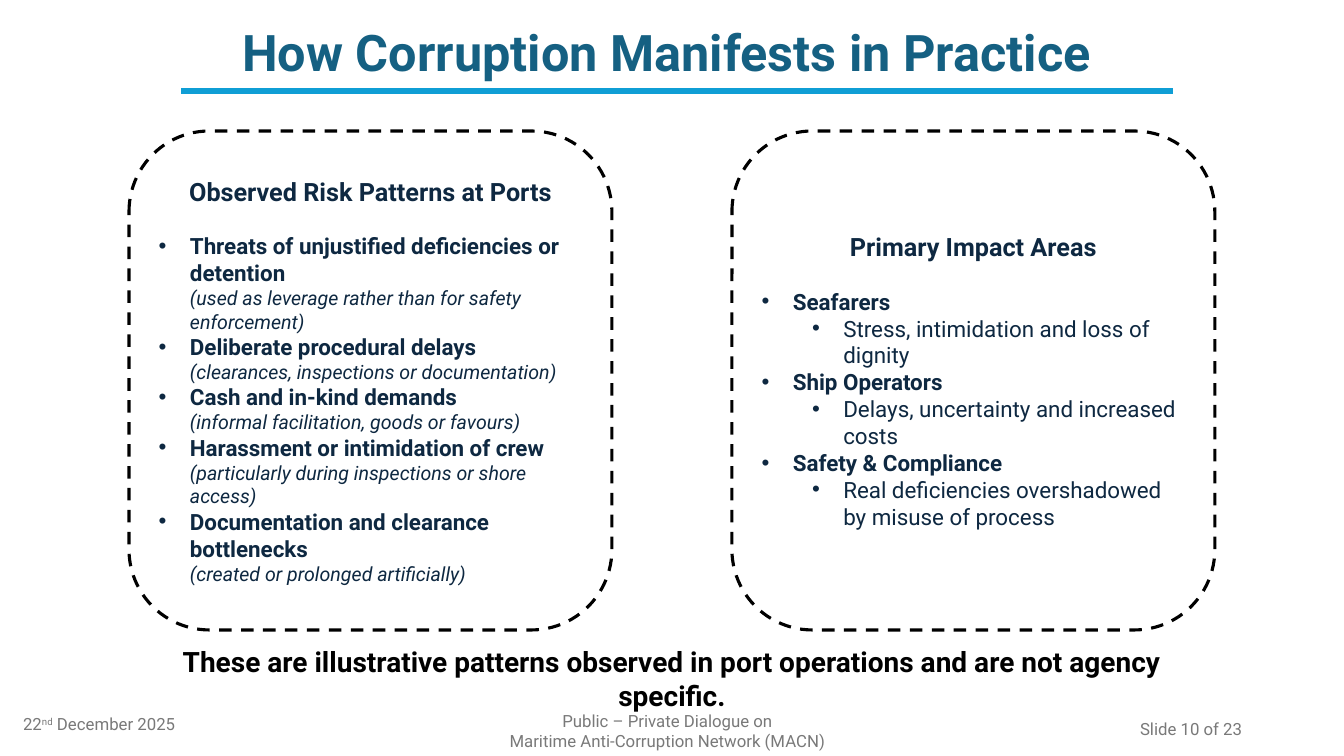
from copy import deepcopy
from dataclasses import dataclass

from lxml import etree
from pptx import Presentation
from pptx.dml.color import RGBColor
from pptx.enum.dml import MSO_LINE
from pptx.enum.shapes import MSO_CONNECTOR, MSO_SHAPE
from pptx.enum.text import MSO_ANCHOR, MSO_AUTO_SIZE, PP_ALIGN
from pptx.oxml.ns import qn
from pptx.util import Inches, Pt

LEFT, CENTER, RIGHT = PP_ALIGN.LEFT, PP_ALIGN.CENTER, PP_ALIGN.RIGHT
TOP, MIDDLE = MSO_ANCHOR.TOP, MSO_ANCHOR.MIDDLE
NO_FIT = MSO_AUTO_SIZE.NONE
ROUND_RECT, STRAIGHT, DASH = MSO_SHAPE.ROUNDED_RECTANGLE, MSO_CONNECTOR.STRAIGHT, MSO_LINE.DASH
TWO_CONTENT = 3


@dataclass(frozen=True)
class Theme:
    font: str = "Roboto"
    title: str = "156082"
    rule: str = "0F9ED5"
    ink: str = "0E2841"
    black: str = "000000"
    grey: str = "797979"
    title_size: int = 36
    note_size: int = 20
    head_size: int = 18
    body_size: int = 16
    detail_size: int = 14
    footer_size: int = 12


class Deck:
    """Holds the theme and the current slide; lengths are percent of the slide."""

    def __init__(self, theme):
        self.theme = theme
        self.prs = Presentation()
        self.prs.slide_width, self.prs.slide_height = Inches(13.33), Inches(7.5)
        self.slide = self.prs.slides.add_slide(self.prs.slide_layouts[TWO_CONTENT])

    def box(self, x, y, w, h):
        sw, sh = self.prs.slide_width, self.prs.slide_height
        return [int(n * side / 100) for n, side in ((x, sw), (y, sh), (w, sw), (h, sh))]

    def frame(self, sp, anchor, inset=None):
        tf = sp.text_frame
        fmt = {"word_wrap": True, "auto_size": NO_FIT, "vertical_anchor": anchor}
        if inset is not None:
            fmt |= {f"margin_{s}": Inches(inset) for s in ("left", "right", "top", "bottom")}
        for name, value in fmt.items():
            setattr(tf, name, value)
        return tf

    def place(self, idx, area):
        sp = self.slide.placeholders[idx]
        sp.left, sp.top, sp.width, sp.height = self.box(*area)
        return sp

    def run(self, p, text, size, color, bold=False, italic=False):
        r = p.add_run()
        r.text = text
        fmt = {"name": self.theme.font, "size": Pt(size), "bold": bold, "italic": italic}
        for name, value in fmt.items():
            setattr(r.font, name, value)
        r.font.color.rgb = RGBColor.from_string(color)
        return r

    def paragraph(self, tf, first=False, align=LEFT, after=0, spacing=1.0):
        p = tf.paragraphs[0] if first else tf.add_paragraph()
        fmt = {"alignment": align, "space_before": Pt(0), "space_after": Pt(after),
               "line_spacing": spacing}
        for name, value in fmt.items():
            setattr(p, name, value)
        return p

    def bullet(self, p, char=None, level=0):
        p.level = level
        pPr = p._p.get_or_add_pPr()
        hang = Inches(0.31) if char else 0
        pPr.set("marL", str(hang + Inches(0.5) * level))
        pPr.set("indent", str(-hang))
        if char:
            etree.SubElement(pPr, qn("a:buFont")).set("typeface", "Arial")
            etree.SubElement(pPr, qn("a:buChar")).set("char", char)
        else:
            etree.SubElement(pPr, qn("a:buNone"))

    def title(self, text, area):
        t = self.theme
        tf = self.frame(self.place(0, area), MIDDLE)
        p = self.paragraph(tf, True, CENTER, spacing=0.9)
        self.run(p, text, t.title_size, t.title, bold=True)

    def rule(self, x1, x2, y):
        ends = self.box(x1, y, x2, y)
        line = self.slide.shapes.add_connector(STRAIGHT, *ends)
        line.line.color.rgb = RGBColor.from_string(self.theme.rule)
        line.line.width = Pt(4.5)
        etree.SubElement(line._element.spPr, qn("a:effectLst"))

    def outline(self, area):
        sp = self.slide.shapes.add_shape(ROUND_RECT, *self.box(*area))
        sp.shadow.inherit = False
        sp.fill.background()
        sp.line.color.rgb = RGBColor.from_string(self.theme.black)
        sp.line.width = Pt(2.25)
        sp.line.dash_style = DASH

    def card_list(self, idx, area, heading, items, nested):
        """Heading over bullets; each item's detail is a sub-bullet or an italic line."""
        t = self.theme
        self.outline(area)
        x, y, w, h = area
        dx, dy = 1.76, 3.12  # inset that clears the rounded corners
        sp = self.place(idx, (x + dx, y + dy, w - 2 * dx, h - 2 * dy))
        self.slide.shapes._spTree.append(sp._element)
        tf = self.frame(sp, MIDDLE, 0.06)
        p = self.paragraph(tf, True, CENTER, after=18.75)
        self.bullet(p)
        self.run(p, heading, t.head_size, t.ink, bold=True)
        for item, detail in items:
            p = self.paragraph(tf)
            self.bullet(p, "•")
            r = self.run(p, item, t.body_size, t.ink, bold=True)
            if nested:
                p = self.paragraph(tf)
                self.bullet(p, "•", 1)
                self.run(p, detail, t.body_size, t.ink)
            else:
                p.add_line_break()
                p._p[-1].append(deepcopy(r._r.rPr))
                self.run(p, detail, t.detail_size, t.ink, italic=True)

    def text(self, area, lines, size, color, align=LEFT, anchor=MIDDLE, bold=False):
        """Each line is a list of (text, superscript) pieces."""
        tf = self.frame(self.slide.shapes.add_textbox(*self.box(*area)), anchor)
        for i, line in enumerate(lines):
            p = self.paragraph(tf, i == 0, align)
            for piece, raised in line:
                r = self.run(p, piece, size, color, bold)
                if raised:
                    r._r.rPr.set("baseline", "30000")


RISKS = [
    ("Threats of unjustified deficiencies or detention",
     "(used as leverage rather than for safety enforcement)"),
    ("Deliberate procedural delays", "(clearances, inspections or documentation)"),
    ("Cash and in-kind demands", "(informal facilitation, goods or favours)"),
    ("Harassment or intimidation of crew", "(particularly during inspections or shore access)"),
    ("Documentation and clearance bottlenecks", "(created or prolonged artificially)"),
]
IMPACTS = [
    ("Seafarers", "Stress, intimidation and loss of dignity"),
    ("Ship Operators", "Delays, uncertainty and increased costs"),
    ("Safety & Compliance", "Real deficiencies overshadowed by misuse of process"),
]


def main():
    theme = Theme()
    deck = Deck(theme)

    # Title and rule
    deck.title("How Corruption Manifests in Practice", (9.6, 1.87, 80.04, 10.8))
    deck.rule(13.5, 87.25, 12)

    # Two cards
    cards = [("Observed Risk Patterns at Ports", RISKS, False),
             ("Primary Impact Areas", IMPACTS, True)]
    for i, (heading, items, nested) in enumerate(cards):
        area = (9.6 + 44.86 * i, 17.33, 35.93, 66)
        deck.card_list(i + 1, area, heading, items, nested)

    # Closing note
    note = ("These are illustrative patterns observed in port operations "
            "and are not agency specific.")
    deck.text((9.9, 84.6, 80.2, 10.9), [[(note, False)]], theme.note_size, theme.black,
              CENTER, TOP, bold=True)

    # Footer
    footers = [
        ((0.98, 93.07, 22.5, 5.33), LEFT,
         [[("22", False), ("nd", True), (" December 2025", False)]]),
        ((32.78, 94, 33.76, 5.33), CENTER,
         [[("Public – Private Dialogue on", False)],
          [("Maritime Anti-Corruption Network (MACN)", False)]]),
        ((70.67, 93.73, 22.5, 5.33), RIGHT, [[("Slide 10 of 23", False)]]),
    ]
    for area, align, lines in footers:
        deck.text(area, lines, theme.footer_size, theme.grey, align)

    deck.prs.save("out.pptx")


if __name__ == "__main__":
    main()
